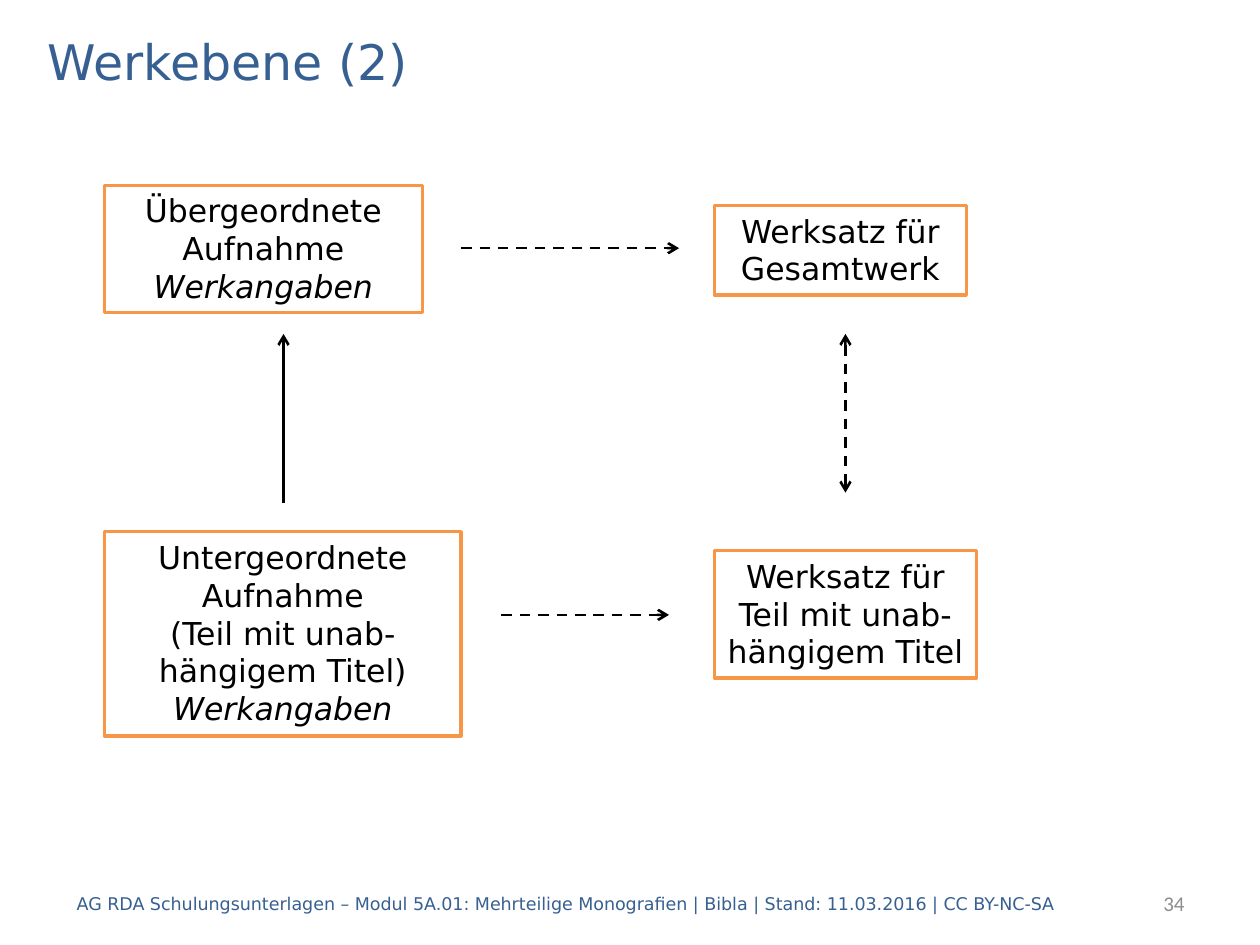
"""Build the slide on linked records at work level."""
from dataclasses import dataclass

from lxml.etree import SubElement
from pptx import Presentation
from pptx.dml.color import RGBColor
from pptx.enum.dml import MSO_LINE
from pptx.enum.shapes import MSO_CONNECTOR, MSO_SHAPE
from pptx.enum.text import MSO_ANCHOR, MSO_AUTO_SIZE, PP_ALIGN
from pptx.oxml.ns import qn
from pptx.util import Inches, Pt


@dataclass(frozen=True)
class Theme:
    font: str = "DejaVu Sans"
    number_font: str = "Calibri"
    blue: RGBColor = RGBColor(0x37, 0x60, 0x92)
    orange: RGBColor = RGBColor(0xF7, 0x96, 0x46)
    gray: RGBColor = RGBColor(0x8C, 0x8C, 0x8C)
    black: RGBColor = RGBColor(0, 0, 0)
    white: RGBColor = RGBColor(0xFF, 0xFF, 0xFF)
    title_size: int = 28
    box_size: int = 18
    footer_size: int = 10
    number_size: int = 12


theme = Theme()


def write_text(shape, text, size, color, font=theme.font, align=PP_ALIGN.LEFT,
               anchor=MSO_ANCHOR.MIDDLE, italic_line=None):
    """Fill a shape with one formatted paragraph per line of text."""
    frame = shape.text_frame
    frame.text = text
    frame.word_wrap = True
    frame.auto_size = MSO_AUTO_SIZE.NONE
    frame.vertical_anchor = anchor
    for paragraph in frame.paragraphs:
        paragraph.alignment = align
        for run in paragraph.runs:
            run.font.name = font
            run.font.size = Pt(size)
            run.font.color.rgb = color
            run.font.italic = run.text == italic_line


presentation = Presentation()
presentation.slide_width = Inches(10)
presentation.slide_height = Inches(7.5)
slide = presentation.slides.add_slide(presentation.slide_layouts[5])

title = slide.shapes.title
title.left, title.top = Inches(0.28), Inches(0.2)
title.width, title.height = Inches(9.45), Inches(0.56)
write_text(title, "Werkebene (2)", theme.title_size, theme.blue)

footer_top, footer_height = Inches(6.97), Inches(0.4)
footer = slide.shapes.add_textbox(Inches(0.51), footer_top, Inches(8.35), footer_height)
write_text(
    footer,
    "AG RDA Schulungsunterlagen – Modul 5A.01: Mehrteilige Monografien | Bibla | "
    "Stand: 11.03.2016 | CC BY-NC-SA",
    theme.footer_size, theme.blue,
)
slide_number = slide.shapes.add_textbox(Inches(7.91), footer_top, Inches(1.59), footer_height)
write_text(slide_number, "34", theme.number_size, theme.gray,
           font=theme.number_font, align=PP_ALIGN.RIGHT)

record_left, work_left = 0.83, 5.67
work_details = "Werkangaben"
boxes = [
    (record_left, 1.47, 2.52, 1.01, 1.75, f"Übergeordnete Aufnahme\n{work_details}"),
    (work_left, 1.63, 2, 0.71, 2, "Werksatz für Gesamtwerk"),
    (record_left, 4.22, 2.83, 1.62, 2,
     f"Untergeordnete Aufnahme\n(Teil mit unab-hängigem Titel)\n{work_details}"),
    (work_left, 4.37, 2.08, 1.01, 2, "Werksatz für Teil mit unab-hängigem Titel"),
]
for left, top, width, height, line_width, text in boxes:
    box = slide.shapes.add_shape(
        MSO_SHAPE.RECTANGLE, Inches(left), Inches(top), Inches(width), Inches(height))
    box.shadow.inherit = False
    box.fill.solid()
    box.fill.fore_color.rgb = theme.white
    box.line.color.rgb = theme.orange
    box.line.width = Pt(line_width)
    write_text(box, text, theme.box_size, theme.black, align=PP_ALIGN.CENTER,
               anchor=MSO_ANCHOR.TOP, italic_line=work_details)

arrows = [
    (3.66, 1.97, 5.39, 1.97, MSO_LINE.DASH, ["tailEnd"]),
    (2.25, 3.99, 2.25, 2.65, MSO_LINE.SOLID, ["tailEnd"]),
    (6.71, 2.65, 6.71, 3.91, MSO_LINE.DASH, ["headEnd", "tailEnd"]),
    (3.98, 4.88, 5.31, 4.88, MSO_LINE.DASH, ["tailEnd"]),
]
for start_x, start_y, end_x, end_y, dash, arrowheads in arrows:
    arrow = slide.shapes.add_connector(
        MSO_CONNECTOR.STRAIGHT, Inches(start_x), Inches(start_y), Inches(end_x), Inches(end_y))
    arrow.line.color.rgb = theme.black
    arrow.line.width = Pt(1.5)
    arrow.line.dash_style = dash
    properties = arrow.element.spPr
    line = properties.find(qn("a:ln"))
    for arrowhead in arrowheads:
        SubElement(line, qn(f"a:{arrowhead}"), type="arrow")
    SubElement(properties, qn("a:effectLst"))

presentation.save("out.pptx")
